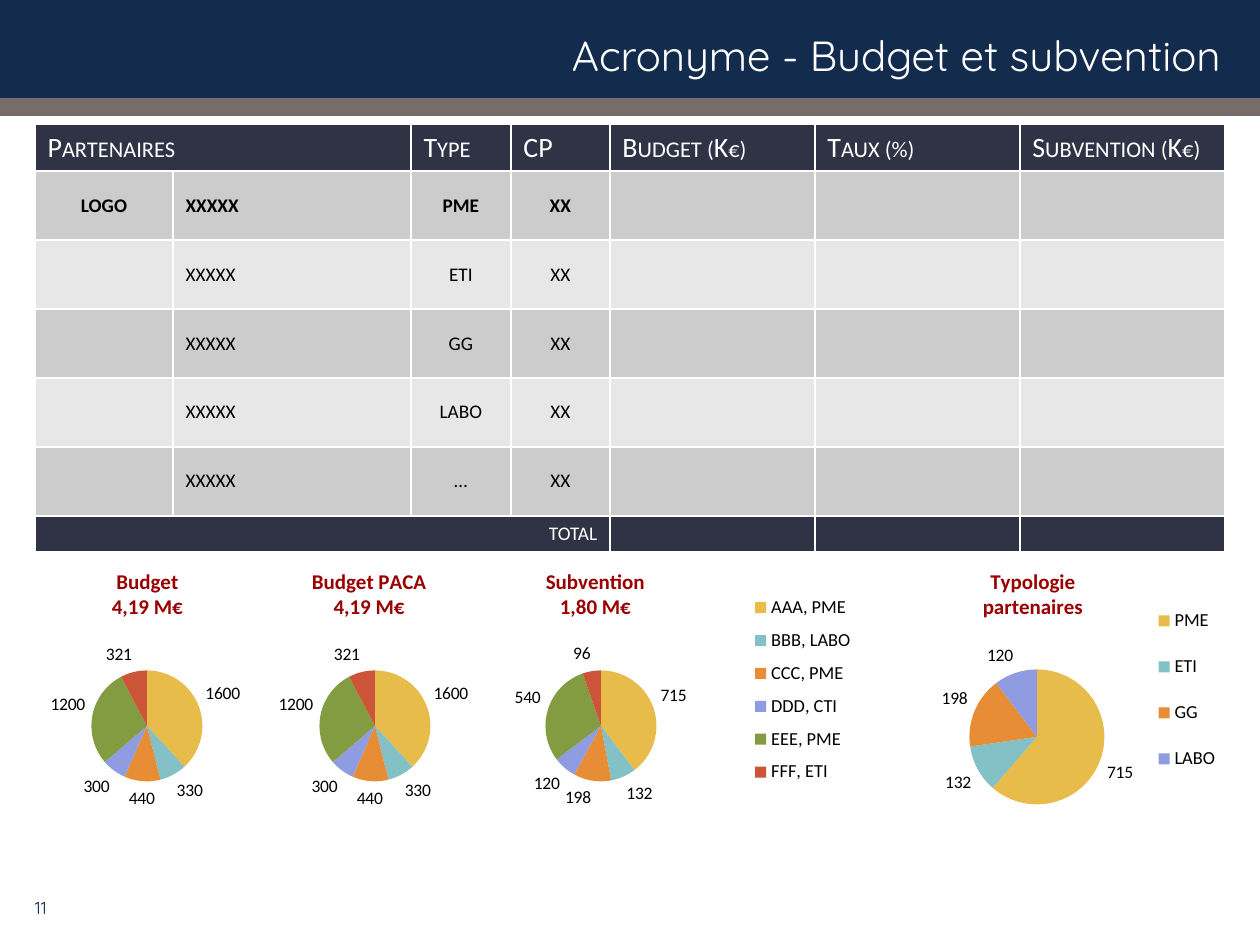
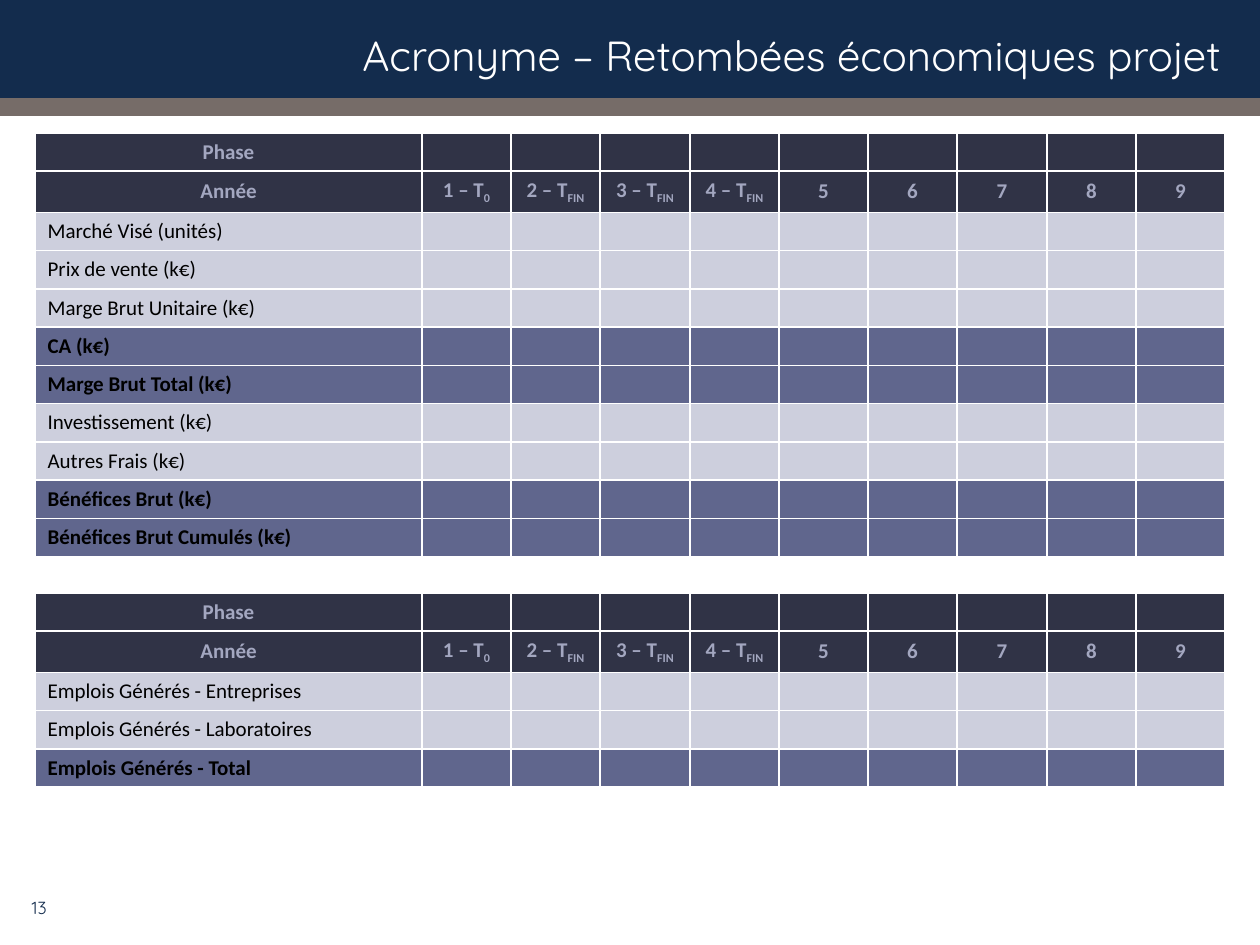
from lxml.etree import SubElement
from pptx import Presentation
from pptx.chart.data import CategoryChartData
from pptx.dml.color import RGBColor
from pptx.enum.chart import XL_CHART_TYPE, XL_LABEL_POSITION, XL_LEGEND_POSITION
from pptx.enum.shapes import MSO_SHAPE
from pptx.enum.text import MSO_ANCHOR, MSO_AUTO_SIZE, PP_ALIGN
from pptx.oxml import parse_xml
from pptx.oxml.ns import nsdecls, qn
from pptx.util import Emu, Pt

SLIDE_WIDTH, SLIDE_HEIGHT = 1260, 945
EMU_PER_PX = 914400 / 126

WHITE = RGBColor(0xFF, 0xFF, 0xFF)
BLACK = RGBColor(0x00, 0x00, 0x00)
NAVY = RGBColor(0x13, 0x2C, 0x4D)
TAUPE = RGBColor(0x76, 0x6C, 0x68)
DARK_SLATE = RGBColor(0x30, 0x33, 0x46)
HEADER_LILAC = RGBColor(0xA3, 0xA7, 0xC0)
GREY = RGBColor(0xCC, 0xCC, 0xCC)
LIGHT_GREY = RGBColor(0xE7, 0xE7, 0xE7)
LILAC = RGBColor(0xCD, 0xCF, 0xDD)
VIOLET = RGBColor(0x60, 0x66, 0x8D)
DARK_RED = RGBColor(0x99, 0x00, 0x00)
PIE_COLORS = [
    RGBColor(0xE8, 0xBC, 0x4A), RGBColor(0x83, 0xC1, 0xC6),
    RGBColor(0xE7, 0x8D, 0x35), RGBColor(0x90, 0x9C, 0xE1),
    RGBColor(0x83, 0x9C, 0x41), RGBColor(0xCC, 0x54, 0x39),
]
TITLE_FONT, BODY_FONT = "Quicksand", "Calibri"

TABLE_LEFT, TABLE_WIDTH = 35, 1190
CHART_TOP, CHART_HEIGHT = 553, 273
TITLE_TOP = 564
LEGEND_TOP, LEGEND_HEIGHT = 586, 208

PARTNER_COLUMNS = [138, 238, 100, 99, 205, 205, 205]
PARTNER_TYPES = ["PME", "ETI", "GG", "LABO", "…"]
YEARS = [("1 – T", "0"), ("2 – T", "FIN"), ("3 – T", "FIN"), ("4 – T", "FIN"),
         ("5",), ("6",), ("7",), ("8",), ("9",)]
LABEL_WIDTH = 387
YEAR_EDGES = [round((TABLE_WIDTH - LABEL_WIDTH) * step / len(YEARS))
              for step in range(len(YEARS) + 1)]
YEAR_COLUMNS = [LABEL_WIDTH] + [right - left for left, right
                                in zip(YEAR_EDGES, YEAR_EDGES[1:])]
REVENUE_ROWS = [
    ("Marché Visé (unités)", False), ("Prix de vente (k€)", False),
    ("Marge Brut Unitaire (k€)", False), ("CA (k€)", True),
    ("Marge Brut Total (k€)", True), ("Investissement (k€)", False),
    ("Autres Frais (k€)", False), ("Bénéfices Brut (k€)", True),
    ("Bénéfices Brut Cumulés (k€)", True),
]
JOB_ROWS = [
    ("Emplois Générés - Entreprises", False),
    ("Emplois Générés - Laboratoires", False),
    ("Emplois Générés - Total", True),
]
BUDGET_PIE = dict(zip("123456", [1600, 330, 440, 300, 1200, 321]))
GRANT_PIE = {"AAA, PME": 715, "BBB, LABO": 132, "CCC, PME": 198,
             "DDD, CTI": 120, "EEE, PME": 540, "FFF, ETI": 96}
TYPE_PIE = {"PME": 715, "ETI": 132, "GG": 198, "LABO": 120}


def px(*lengths):
    """Turn pixel lengths into a list of EMU lengths."""
    return [Emu(round(length * EMU_PER_PX)) for length in lengths]


def style_font(font, size, color, name=BODY_FONT, bold=False):
    """Set the size, colour, face and weight of a font."""
    font.size = Pt(size)
    font.name = name
    font.bold = bold
    font.color.rgb = color


def add_run(paragraph, text, size, color, name=BODY_FONT, bold=False):
    """Append a formatted run to a paragraph and return it."""
    run = paragraph.add_run()
    run.text = text
    style_font(run.font, size, color, name, bold)
    return run


def add_layout_bands(layout, slide):
    """Put the two header bands behind the placeholders of the layout."""
    bands = [(0, 113, NAVY), (98, 18, TAUPE)]
    for position, (top, height, color) in enumerate(bands):
        band = slide.shapes.add_shape(MSO_SHAPE.RECTANGLE, *px(0, top, SLIDE_WIDTH, height))
        band.shadow.inherit = False
        band.fill.solid()
        band.fill.fore_color.rgb = color
        band.line.fill.background()
        band._element.nvSpPr.cNvPr.set("id", str(100 + position))
        layout.shapes._spTree.insert(2 + position, band._element)


def write_line(shape, box, text, size, color):
    """Place a shape and fill it with one right-aligned line."""
    shape.left, shape.top, shape.width, shape.height = px(*box)
    frame = shape.text_frame
    frame.word_wrap = True
    frame.auto_size = MSO_AUTO_SIZE.NONE
    frame.vertical_anchor = MSO_ANCHOR.MIDDLE
    paragraph = frame.paragraphs[0]
    paragraph.alignment = PP_ALIGN.RIGHT
    add_run(paragraph, text, size, color, TITLE_FONT)


def add_heading(slide, title, number):
    """Write the slide title and the page number."""
    write_line(slide.shapes.title, (20, 18, 1213, 73), title, 24, WHITE)
    number_box = (0, 883, 59, 50)
    text_box = slide.shapes.add_textbox(*px(*number_box))
    write_line(text_box, number_box, number, 10, NAVY)


def add_grid(slide, top, columns, rows):
    """Add an unstyled table with the given column and row sizes."""
    frame = slide.shapes.add_table(len(rows), len(columns),
                                   *px(TABLE_LEFT, top, sum(columns), sum(rows)))
    table = frame.table
    table.first_row = table.horz_banding = False
    for column, width in zip(table.columns, px(*columns)):
        column.width = width
    for row, height in zip(table.rows, px(*rows)):
        row.height = height
    return table


def fill_cell(cell, fill, texts=(), size=12, color=BLACK, bold=False,
              align=PP_ALIGN.LEFT, small_caps=False):
    """Give a cell white borders, a fill and runs, the second one subscript."""
    properties = cell._tc.get_or_add_tcPr()
    for side in "LRTB":
        properties.append(parse_xml(
            f'<a:ln{side} {nsdecls("a")} w="12700"><a:solidFill>'
            f'<a:srgbClr val="{WHITE}"/></a:solidFill></a:ln{side}>'))
    cell.fill.solid()
    cell.fill.fore_color.rgb = fill
    cell.vertical_anchor = MSO_ANCHOR.MIDDLE
    paragraph = cell.text_frame.paragraphs[0]
    paragraph.alignment = align
    for position, text in enumerate(texts):
        run = add_run(paragraph, text, size, color, bold=bold)
        run_properties = run._r.get_or_add_rPr()
        if small_caps:
            run_properties.set("cap", "small")
        if position:
            run_properties.set("baseline", "-25000")
    if not texts:
        SubElement(paragraph._p, qn("a:endParaRPr"), sz=str(size * 100))


def add_partner_table(slide):
    """Add the table of partners with its header and total rows."""
    table = add_grid(slide, 124, PARTNER_COLUMNS, [47] + [69] * len(PARTNER_TYPES) + [35])
    total_row = len(PARTNER_TYPES) + 1
    headers = ["Partenaires", "", "Type", "CP", "Budget (K€)", "Taux (%)", "Subvention (K€)"]
    for column, header in enumerate(headers):
        fill_cell(table.cell(0, column), DARK_SLATE, [header] if header else [],
                  16, WHITE, small_caps=True)
        fill_cell(table.cell(total_row, column), DARK_SLATE,
                  [] if column else ["TOTAL"], 11, WHITE, align=PP_ALIGN.RIGHT)
    for row, partner_type in enumerate(PARTNER_TYPES, 1):
        first = row == 1
        texts = ["LOGO" if first else "", "XXXXX", partner_type, "XX", "", "", ""]
        for column, text in enumerate(texts):
            fill_cell(table.cell(row, column), GREY if row % 2 else LIGHT_GREY,
                      [text] if text else [], 11, bold=first,
                      align=PP_ALIGN.LEFT if column == 1 else PP_ALIGN.CENTER)
    table.cell(0, 0).merge(table.cell(0, 1))
    table.cell(total_row, 0).merge(table.cell(total_row, 3))


def add_year_table(slide, top, body):
    """Add a table of yearly figures; totals are bold on violet."""
    table = add_grid(slide, top, YEAR_COLUMNS, [38, 41] + [38] * len(body))
    headers = [[("Phase",)] + [()] * len(YEARS), [("Année",)] + YEARS]
    for row, header in enumerate(headers):
        for column, texts in enumerate(header):
            fill_cell(table.cell(row, column), DARK_SLATE, texts, color=HEADER_LILAC,
                      bold=True, align=PP_ALIGN.CENTER)
    for row, (label, is_total) in enumerate(body, len(headers)):
        for column in range(len(YEAR_COLUMNS)):
            fill_cell(table.cell(row, column), VIOLET if is_total else LILAC,
                      [] if column else [label], bold=is_total)


def place_part(part, index, chart_box, left, top, width=None, height=None):
    """Give a chart part a manual layout from slide pixels."""
    for layout in part.findall(qn("c:layout")):
        part.remove(layout)
    chart_left, chart_top, chart_width, chart_height = chart_box
    values = {"x": (left - chart_left) / chart_width, "y": (top - chart_top) / chart_height}
    if width:
        values.update(w=width / chart_width, h=height / chart_height)
    target = '<c:layoutTarget val="inner"/>' if index == 0 else ""
    modes = "".join(f'<c:{axis}Mode val="edge"/>' for axis in "xy")
    sizes = "".join(f'<c:{key} val="{value:.4f}"/>' for key, value in values.items())
    part.insert(index, parse_xml(
        f'<c:layout {nsdecls("c")}><c:manualLayout>{target}{modes}{sizes}'
        '</c:manualLayout></c:layout>'))


def add_pie(slide, left, width, title_lines, title_left, data, center, diameter, legend=None):
    """Add a pie with a two-line title; legend is its left and width."""
    box = (left, CHART_TOP, width, CHART_HEIGHT)
    chart_data = CategoryChartData()
    chart_data.categories = list(data)
    chart_data.add_series("Series 1", list(data.values()))
    chart = slide.shapes.add_chart(XL_CHART_TYPE.PIE, *px(*box), chart_data).chart
    style_font(chart.font, 18, BLACK)
    chart._chartSpace.find(qn("c:txPr")).addprevious(parse_xml(
        f'<c:spPr {nsdecls("c", "a")}><a:noFill/><a:ln><a:noFill/></a:ln></c:spPr>'))

    chart.has_title = True
    frame = chart.chart_title.text_frame
    for position, line in enumerate(title_lines):
        paragraph = frame.add_paragraph() if position else frame.paragraphs[0]
        add_run(paragraph, line, 12, DARK_RED, bold=True)
    place_part(chart.chart_title._element, 1, box, title_left, TITLE_TOP)

    plot = chart.plots[0]
    plot.vary_by_categories = True
    for position in range(len(data)):
        fill = plot.series[0].points[position].format.fill
        fill.solid()
        fill.fore_color.rgb = PIE_COLORS[position]
    plot.has_data_labels = True
    labels = plot.data_labels
    labels.show_value = True
    labels.show_percentage = False
    labels.position = XL_LABEL_POSITION.OUTSIDE_END
    style_font(labels.font, 10, BLACK)
    center_x, center_y = center
    place_part(chart._chartSpace.find(f'{qn("c:chart")}/{qn("c:plotArea")}'), 0, box,
               center_x - diameter / 2, center_y - diameter / 2, diameter, diameter)

    chart.has_legend = legend is not None
    if legend:
        legend_left, legend_width = legend
        chart.legend.position = XL_LEGEND_POSITION.RIGHT
        chart.legend.include_in_layout = False
        style_font(chart.legend.font, 10.5, BLACK)
        place_part(chart.legend._element, 1, box, legend_left, LEGEND_TOP,
                   legend_width, LEGEND_HEIGHT)


def main():
    """Build the budget slide and the economic benefits slide."""
    presentation = Presentation()
    presentation.slide_width, presentation.slide_height = px(SLIDE_WIDTH, SLIDE_HEIGHT)
    layout = presentation.slide_layouts[5]

    budget = presentation.slides.add_slide(layout)
    add_layout_bands(layout, budget)
    add_heading(budget, "Acronyme - Budget et subvention", "11")
    add_partner_table(budget)
    add_pie(budget, 387, 546, ["Subvention", "1,80 M€"], 542, GRANT_PIE,
            (601, 726), 111, (747, 112))
    add_pie(budget, 0, 308, ["Budget", "4,19 M€"], 108, BUDGET_PIE, (147, 726), 111)
    add_pie(budget, 203, 333, ["Budget PACA", "4,19 M€"], 308, BUDGET_PIE, (375, 726), 111)
    add_pie(budget, 878, 382, ["Typologie", "partenaires"], 979, TYPE_PIE,
            (1037, 737), 135, (1151, 72))

    benefits = presentation.slides.add_slide(layout)
    add_heading(benefits, "Acronyme – Retombées économiques projet", "13")
    add_year_table(benefits, 133, REVENUE_ROWS)
    add_year_table(benefits, 593, JOB_ROWS)
    presentation.save("out.pptx")


if __name__ == "__main__":
    main()
